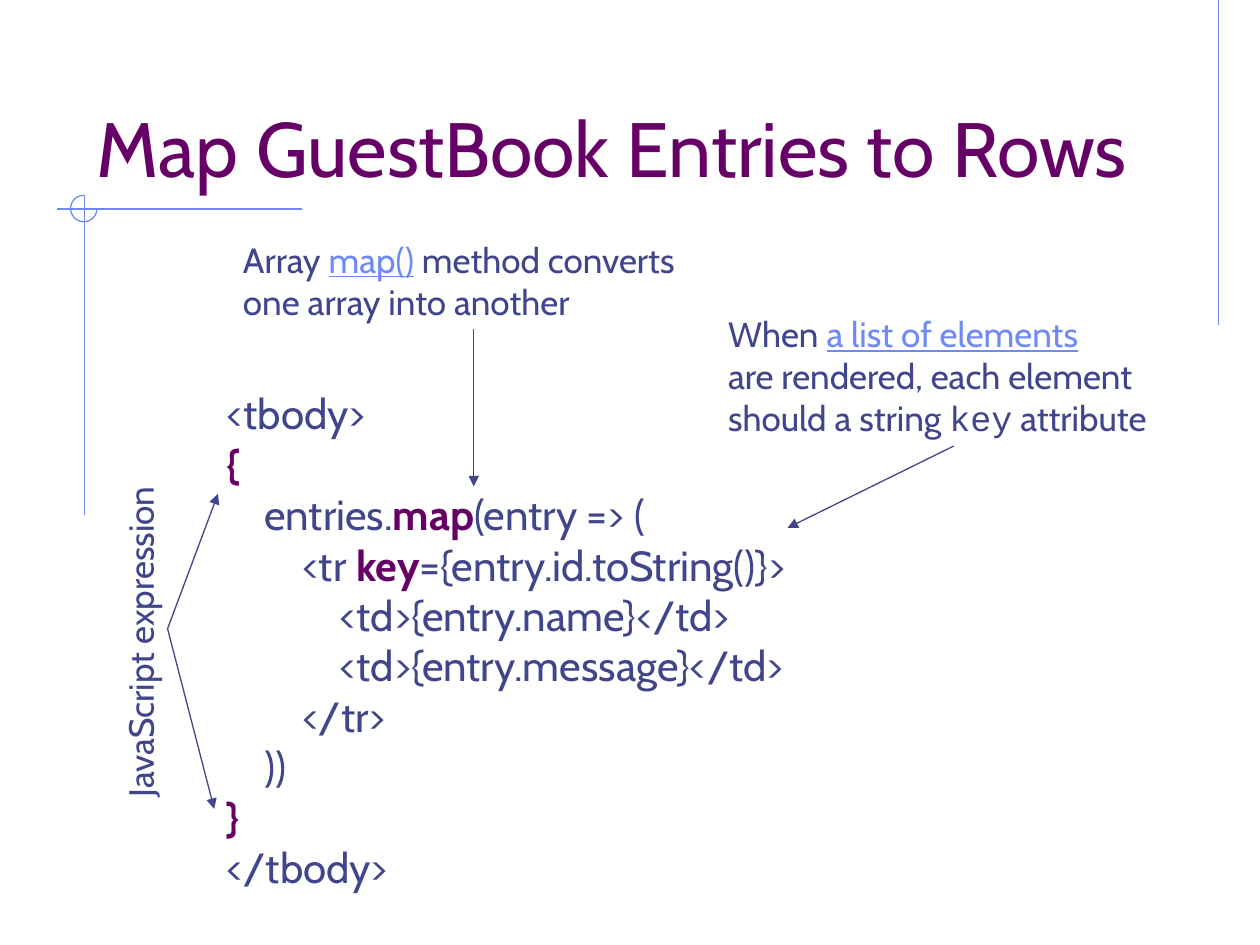
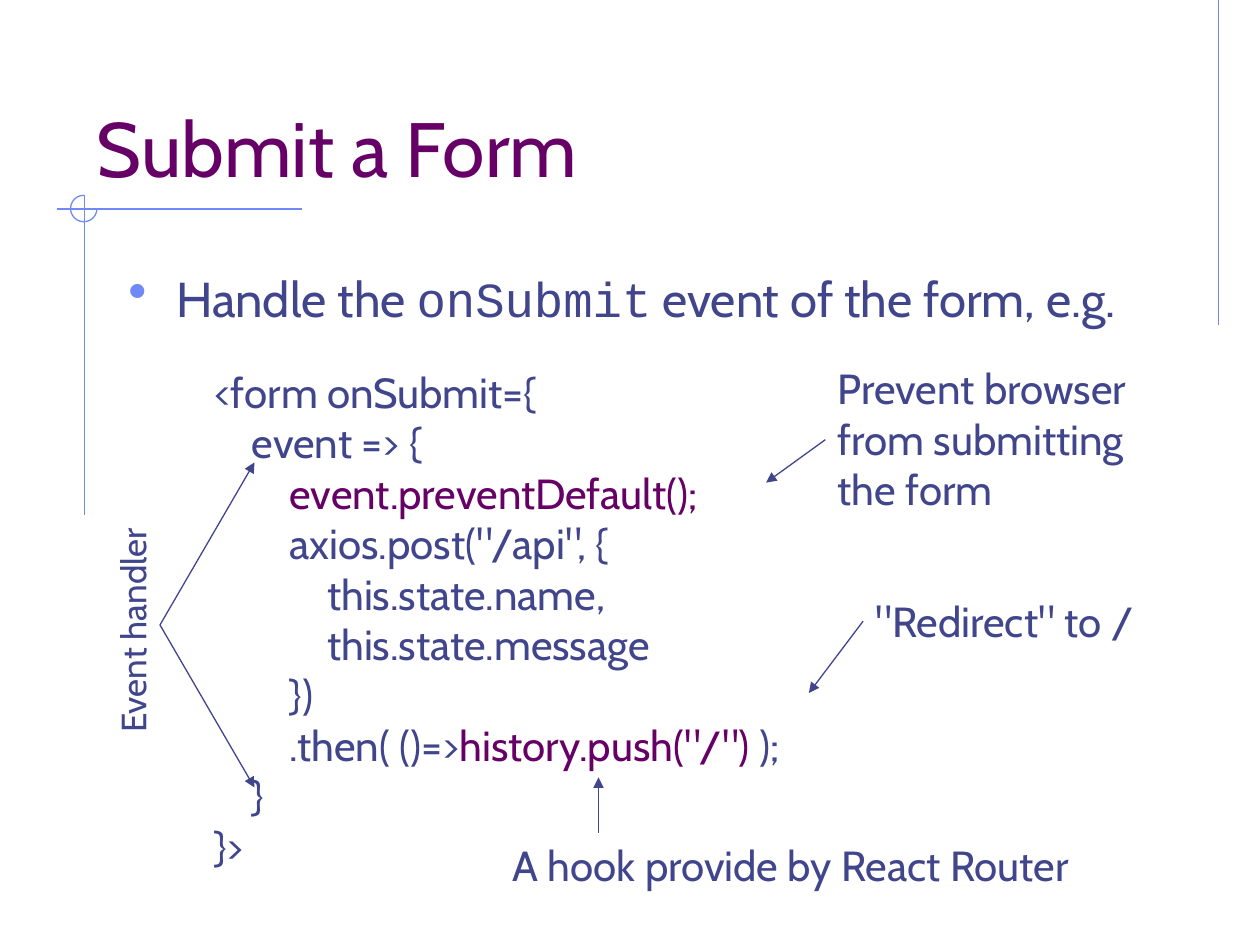
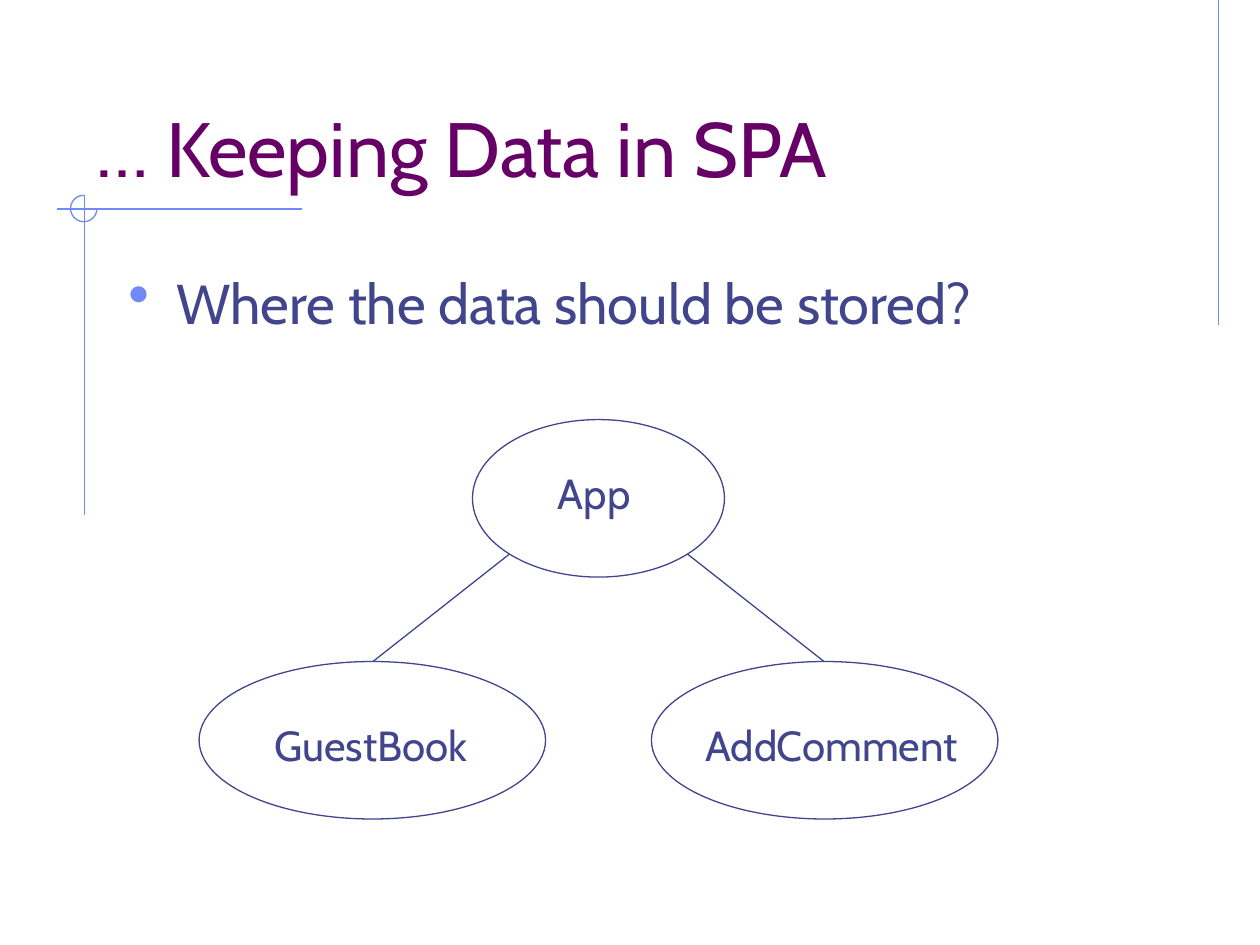
from dataclasses import dataclass

from lxml import etree
from pptx import Presentation
from pptx.dml.color import RGBColor
from pptx.enum.shapes import MSO_CONNECTOR, MSO_SHAPE
from pptx.enum.text import MSO_ANCHOR, MSO_AUTO_SIZE
from pptx.oxml.ns import qn
from pptx.util import Pt

STRAIGHT = MSO_CONNECTOR.STRAIGHT
ARC, OVAL = MSO_SHAPE.ARC, MSO_SHAPE.OVAL
BOTTOM, TOP = MSO_ANCHOR.BOTTOM, MSO_ANCHOR.TOP
FIT_SHAPE, NO_FIT = MSO_AUTO_SIZE.SHAPE_TO_FIT_TEXT, MSO_AUTO_SIZE.NONE

PX = 9144  # EMU; 100 px to the inch


@dataclass(frozen=True)
class Theme:
    ink: RGBColor = RGBColor(0x40, 0x45, 0x8C)
    accent: RGBColor = RGBColor(0x66, 0x00, 0x66)
    frame: RGBColor = RGBColor(0x6F, 0x89, 0xF7)
    font: str = "Cabin"
    mono: str = "Courier New"
    title: int = 44
    question: int = 32
    body: int = 28
    code: int = 24
    note: int = 20
    stroke: float = 0.75


THEME = Theme()
ACCENT = {"color": THEME.accent}
STRONG = {"color": THEME.accent, "bold": True}
LINK = {"color": THEME.frame, "underline": True}
MONO = {"font": THEME.mono}


def add_text(slide, box, lines, size, color=THEME.ink, wrap=False, anchor=TOP):
    """Each line is a list of runs: a plain string or a (string, style) pair."""
    text_box = slide.shapes.add_textbox(*(v * PX for v in box))
    frame = text_box.text_frame
    frame.word_wrap = wrap
    frame.auto_size = NO_FIT if wrap else FIT_SHAPE
    frame.vertical_anchor = anchor
    for number, runs in enumerate(lines):
        paragraph = frame.add_paragraph() if number else frame.paragraphs[0]
        for item in runs:
            words, style = (item, {}) if isinstance(item, str) else item
            run = paragraph.add_run()
            run.text = words
            run.font.size = Pt(size)
            run.font.name = style.get("font", THEME.font)
            run.font.color.rgb = style.get("color", color)
            run.font.bold = style.get("bold", False)
            run.font.underline = style.get("underline", False)
    return text_box


def add_line(slide, ends, color=THEME.ink, arrow=False):
    line = slide.shapes.add_connector(STRAIGHT, *(v * PX for v in ends))
    line.line.color.rgb = color
    line.line.width = Pt(THEME.stroke)
    if arrow:
        etree.SubElement(line.line._get_or_add_ln(), qn("a:tailEnd"), type="triangle")
    etree.SubElement(line._element.spPr, qn("a:effectLst"))


prs = Presentation()
prs.slide_width, prs.slide_height = 1000 * PX, 750 * PX

# Frame and title of every slide
slides = []
for title in ("Map GuestBook Entries to Rows", "Submit a Form", "… Keeping Data in SPA"):
    slide = prs.slides.add_slide(prs.slide_layouts[6])
    for ends in ((967, 0, 967, 258), (240, 166, 45, 166), (67, 155, 67, 409)):
        add_line(slide, ends, THEME.frame)
    corner = slide.shapes.add_shape(ARC, 56 * PX, 155 * PX, 21 * PX, 21 * PX)
    corner.adjustments[0], corner.adjustments[1] = 0, 162
    corner.shadow.inherit = False
    corner.fill.background()
    corner.line.color.rgb = THEME.frame
    corner.line.width = Pt(THEME.stroke)
    add_text(slide, (67, 33, 850, 125), [[title]], THEME.title, THEME.accent, True, BOTTOM)
    slides.append(slide)
map_slide, form_slide, data_slide = slides

# Bulleted statements
for slide, height, size, statement in (
    (form_slide, 67, THEME.body, ["Handle the ", ("onSubmit", MONO), " event of the form, e.g."]),
    (data_slide, 75, THEME.question, ["Where the data should be stored?"]),
):
    bullet = add_text(slide, (92, 208, 850, height), [statement], size, wrap=True)
    props = bullet.text_frame.paragraphs[0]._p.get_or_add_pPr()
    props.set("marL", str(38 * PX))
    props.set("indent", str(-38 * PX))
    bullet_color = etree.SubElement(props, qn("a:buClr"))
    etree.SubElement(bullet_color, qn("a:srgbClr"), val=str(THEME.frame))
    etree.SubElement(props, qn("a:buSzPct"), val="110000")
    etree.SubElement(props, qn("a:buChar"), char="•")

# Code listings
table_code = [
    ["<tbody>"],
    [("{", STRONG)],
    ["    entries.", ("map", STRONG), "(entry => ("],
    ["        <tr ", ("key", STRONG), "={entry.id.toString()}>"],
    ["            <td>{entry.name}</td>"],
    ["            <td>{entry.message}</td>"],
    ["        </tr>"],
    ["    ))"],
    [("}", STRONG)],
    ["</tbody>"],
]
form_code = [
    ["<form onSubmit={"],
    ["    event => {"],
    ["        ", ("event.preventDefault();", ACCENT)],
    ['        axios.post("/api", {'],
    ["            this.state.name,"],
    ["            this.state.message"],
    ["        })"],
    ["        .then( ()=>", ('history.push("/")', ACCENT), " );"],
    ["    }"],
    ["}>"],
]
add_text(map_slide, (170, 303, 563, 414), table_code, THEME.code)
add_text(form_slide, (160, 286, 559, 414), form_code, THEME.code)

# Notes beside the code
map_note = [["Array ", ("map()", LINK), " method converts"], ["one array into another"]]
key_note = [
    ["When ", ("a list of elements", LINK)],
    ["are rendered, each element"],
    ["should a string ", ("key", MONO), " attribute"],
]
prevent_note = [["Prevent browser"], ["from submitting"], ["the form"]]
for slide, box, lines, size in (
    (map_slide, (183, 184, 385, 77), map_note, THEME.note),
    (map_slide, (568, 243, 377, 111), key_note, THEME.note),
    (form_slide, (655, 283, 262, 131), prevent_note, THEME.code),
    (form_slide, (685, 468, 231, 50), [['"Redirect" to /']], THEME.code),
    (form_slide, (397, 661, 490, 50), [["A hook provide by React Router"]], THEME.code),
):
    add_text(slide, box, lines, size)

for slide, box, label in (
    (map_slide, (-31, 478, 285, 44), "JavaScript expression"),
    (form_slide, (10, 474, 191, 44), "Event handler"),
):
    add_text(slide, box, [[label]], THEME.note).rotation = 270

for slide, arrows in (
    (map_slide, ((133, 499, 173, 392), (133, 499, 170, 642),
                 (376, 261, 376, 386), (757, 354, 625, 419))),
    (form_slide, ((127, 496, 202, 367), (127, 496, 202, 625), (655, 349, 608, 383),
                  (685, 493, 642, 550), (475, 661, 475, 617))),
):
    for ends in arrows:
        add_line(slide, ends, arrow=True)

# Component tree
for component, node, label_box in (
    ("App", (375, 333, 200, 125), (433, 366, 78, 50)),
    ("AddComment", (517, 525, 275, 125), (550, 566, 220, 50)),
    ("GuestBook", (158, 525, 275, 125), (208, 566, 179, 50)),
):
    ellipse = data_slide.shapes.add_shape(OVAL, *(v * PX for v in node))
    ellipse.shadow.inherit = False
    ellipse.fill.background()
    ellipse.line.color.rgb = THEME.ink
    ellipse.line.width = Pt(THEME.stroke)
    add_text(data_slide, label_box, [[component]], THEME.code)
for branch in ((404, 440, 296, 525), (546, 440, 654, 525)):
    add_line(data_slide, branch)

prs.save("out.pptx")
